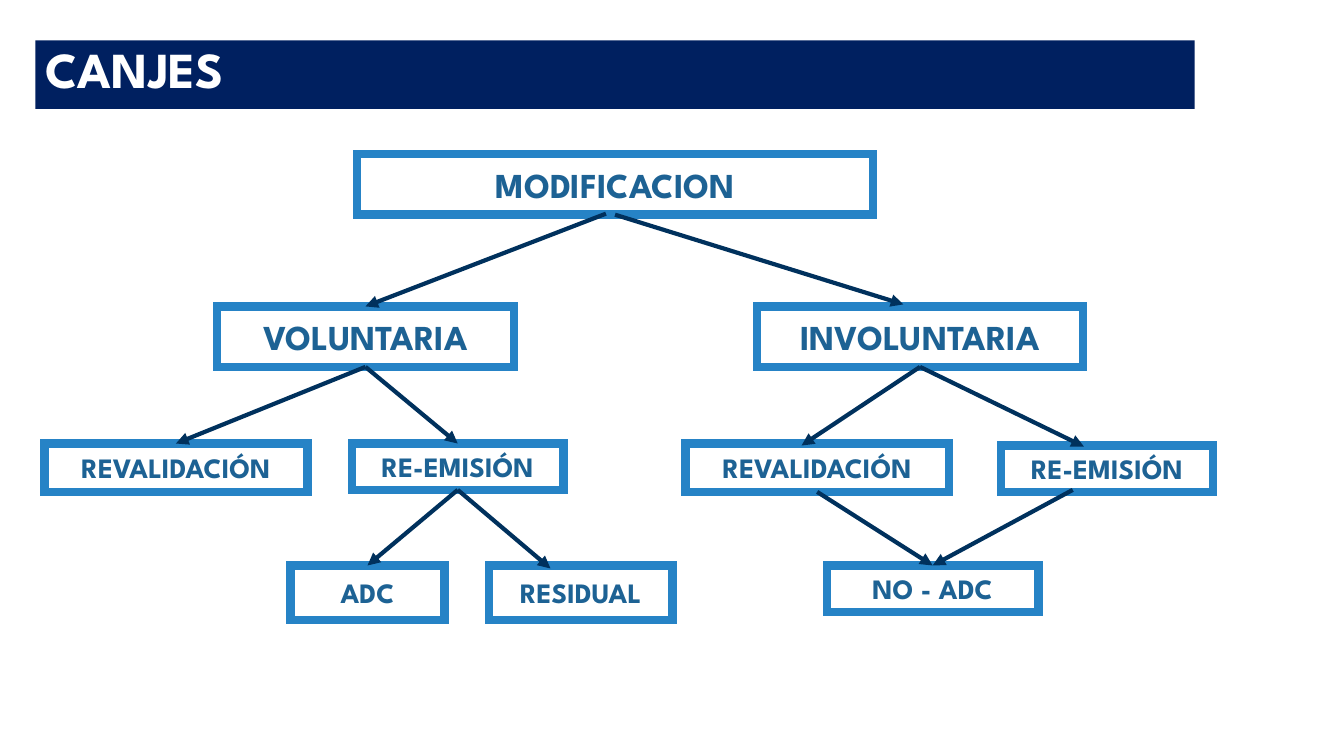
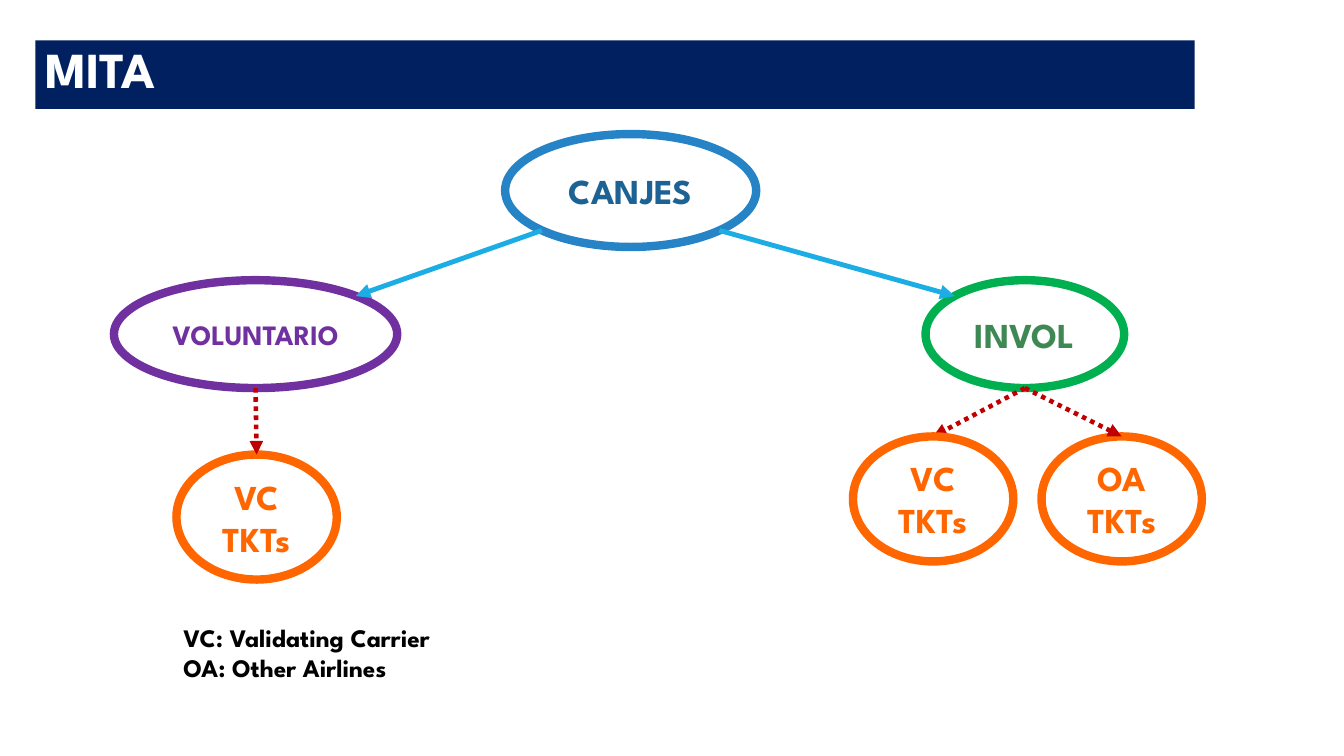
from lxml.etree import SubElement
from math import sqrt
from pptx import Presentation
from pptx.dml.color import RGBColor
from pptx.enum.dml import MSO_LINE
from pptx.enum.shapes import MSO_CONNECTOR, MSO_SHAPE
from pptx.enum.text import MSO_ANCHOR, MSO_AUTO_SIZE, PP_ALIGN
from pptx.oxml.ns import qn
from pptx.util import Pt

PX = 9144  # EMU in one px, 100 px to the inch
FONT = "League Spartan"
TOP, BOTTOM = 0, 2
DIAG = 1 / sqrt(2)

WHITE = RGBColor(0xFF, 0xFF, 0xFF)
BLACK = RGBColor(0x00, 0x00, 0x00)
BAND = RGBColor(0x00, 0x20, 0x60)
BLUE = RGBColor(0x26, 0x83, 0xC6)
INK = RGBColor(0x1D, 0x62, 0x94)
NAVY = RGBColor(0x00, 0x31, 0x5D)
SKY = RGBColor(0x1C, 0xAD, 0xE4)
PURPLE = RGBColor(0x70, 0x30, 0xA0)
GREEN = RGBColor(0x00, 0xB0, 0x50)
MOSS = RGBColor(0x3E, 0x88, 0x53)
ORANGE = RGBColor(0xFF, 0x66, 0x00)
RED = RGBColor(0xC0, 0x00, 0x00)


def scale(*sizes):
    return [round(size * PX) for size in sizes]


def style(para, size, color, align=PP_ALIGN.LEFT):
    para.alignment = align
    font = para.font
    font.name, font.size, font.bold = FONT, Pt(size), True
    font.color.rgb = color


def add_page(deck, text):
    """Add a slide with its title in the dark band."""
    slide = deck.slides.add_slide(deck.slide_layouts[5])
    title = slide.shapes.title
    title.left, title.top, title.width, title.height = scale(35, 40, 1150, 68)
    title.fill.solid()
    title.fill.fore_color.rgb = BAND
    frame = title.text_frame
    frame.text = text
    frame.auto_size = MSO_AUTO_SIZE.NONE
    frame.vertical_anchor = MSO_ANCHOR.TOP
    para = frame.paragraphs[0]
    para.line_spacing = 0.9
    style(para, 36, WHITE)
    return slide


def add_node(slide, kind, box, text, size, edge=BLUE, ink=INK):
    """Add an outlined shape with centred text."""
    node = slide.shapes.add_shape(kind, *scale(*box))
    node.shadow.inherit = False
    node.fill.solid()
    node.fill.fore_color.rgb = WHITE
    node.line.color.rgb = edge
    node.line.width = Pt(6)
    SubElement(node.element.spPr.find(qn("a:ln")), qn("a:miter"), lim="800000")
    frame = node.text_frame
    frame.text = text
    frame.word_wrap = True
    frame.vertical_anchor = MSO_ANCHOR.MIDDLE
    style(frame.paragraphs[0], size, ink, PP_ALIGN.CENTER)
    return node


def add_arrow(slide, start, end, color=NAVY, width=3, dash=None):
    """Draw an arrow; each end is a rectangle to join or an (x, y) point."""
    ends = [scale(*e) if isinstance(e, tuple) else (0, 0) for e in (start, end)]
    arrow = slide.shapes.add_connector(MSO_CONNECTOR.STRAIGHT, *ends[0], *ends[1])
    if not isinstance(start, tuple):
        arrow.begin_connect(start, BOTTOM)
    if not isinstance(end, tuple):
        arrow.end_connect(end, TOP)
    arrow.line.color.rgb = color
    arrow.line.width = Pt(width)
    if dash:
        arrow.line.dash_style = dash
    props = arrow.element.spPr
    SubElement(props.find(qn("a:ln")), qn("a:tailEnd"), type="triangle")
    SubElement(props, qn("a:effectLst"))


def rim(box, across, down):
    """Point on the oval in a box, from its centre in half-widths and heights."""
    left, top, width, height = box
    return left + width / 2 * (1 + across), top + height / 2 * (1 + down)


def add_note(slide, box, lines):
    frame = slide.shapes.add_textbox(*scale(*box)).text_frame
    frame.word_wrap = True
    frame.auto_size = MSO_AUTO_SIZE.SHAPE_TO_FIT_TEXT
    frame.text = "\n".join(lines)
    for para in frame.paragraphs:
        style(para, 18, BLACK)


def build_tree(deck):
    slide = add_page(deck, "CANJES")

    def rect(box, text, size=20):
        return add_node(slide, MSO_SHAPE.RECTANGLE, box, text, size)

    # Boxes, level by level
    root = rect((354, 153, 512, 60), "MODIFICACION", 25)
    vol = rect((215, 304, 295, 60), "VOLUNTARIA", 25)
    invol = rect((751, 304, 323, 60), "INVOLUNTARIA", 25)
    vol_val = rect((44, 440, 261, 48), "REVALIDACIÓN")
    vol_new = rect((349, 440, 210, 46), "RE-EMISIÓN")
    inv_val = rect((680, 440, 261, 48), "REVALIDACIÓN")
    rect((993, 442, 210, 46), "RE-EMISIÓN")
    adc = rect((288, 561, 153, 54), "ADC")
    rect((485, 561, 182, 54), "RESIDUAL")
    no_adc = rect((820, 561, 210, 46), "NO - ADC")

    # Arrows
    for start, end in (
        (root, (896, 302)), ((601, 212), vol),
        (vol, vol_new), (vol, vol_val),
        (vol_new, (546, 564)), (vol_new, adc),
        (invol, (1075, 443)), (invol, (795, 442)),
        ((1064, 486), no_adc), (inv_val, no_adc),
    ):
        add_arrow(slide, start, end)


def build_mita(deck):
    slide = add_page(deck, "MITA")
    root, vol, invol = (501, 133, 249, 112), (113, 278, 281, 107), (918, 278, 197, 107)
    vol_vc, inv_vc, inv_oa = [
        (left, top, 159, 124) for left, top in ((175, 451), (846, 433), (1033, 433))
    ]

    def oval(box, text, size=25, edge=ORANGE, ink=ORANGE):
        add_node(slide, MSO_SHAPE.OVAL, box, text, size, edge, ink)

    def drop(start, end):
        add_arrow(slide, rim(start, 0, 1), rim(end, 0, -1), RED, 3.25, MSO_LINE.ROUND_DOT)

    # Upper ovals and the arrows between them
    oval(root, "CANJES", 25, BLUE, INK)
    oval(vol, "VOLUNTARIO", 20, PURPLE, PURPLE)
    oval(invol, "INVOL", 25, GREEN, MOSS)
    for child, side in ((vol, -DIAG), (invol, DIAG)):
        add_arrow(slide, rim(root, side, DIAG), rim(child, -side, -DIAG), SKY, 3.5)

    # Ticket ovals and their dotted arrows
    oval(vol_vc, "VC TKTs")
    drop(vol, vol_vc)
    drop(invol, inv_vc)
    oval(inv_vc, "VC TKTs")
    oval(inv_oa, "OA TKTs")
    drop(invol, inv_oa)

    add_note(slide, (172, 612, 358, 71), ("VC: Validating Carrier", "OA: Other Airlines"))


def main():
    deck = Presentation()
    deck.slide_width, deck.slide_height = scale(1333, 750)
    build_tree(deck)
    build_mita(deck)
    deck.save("out.pptx")


if __name__ == "__main__":
    main()
